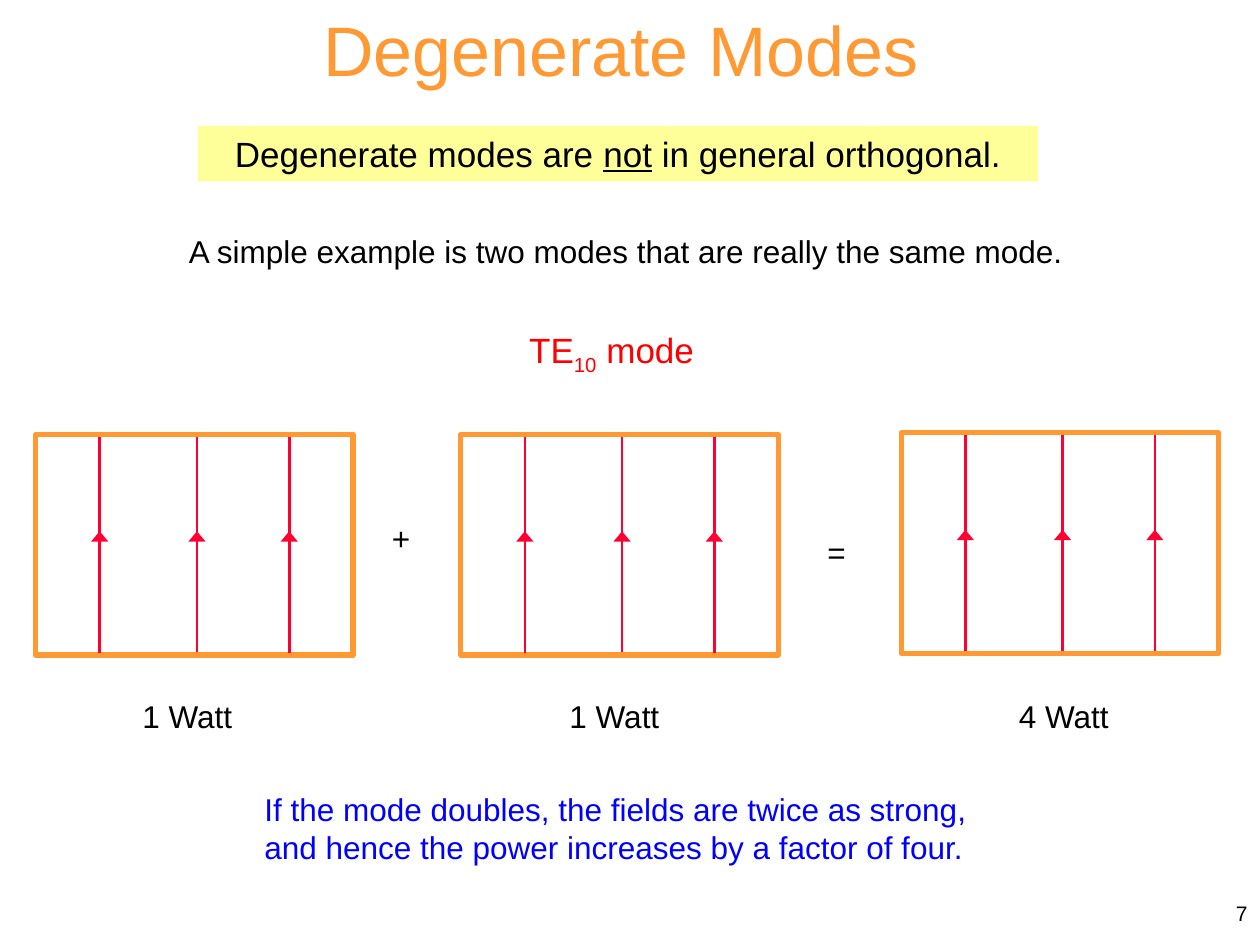
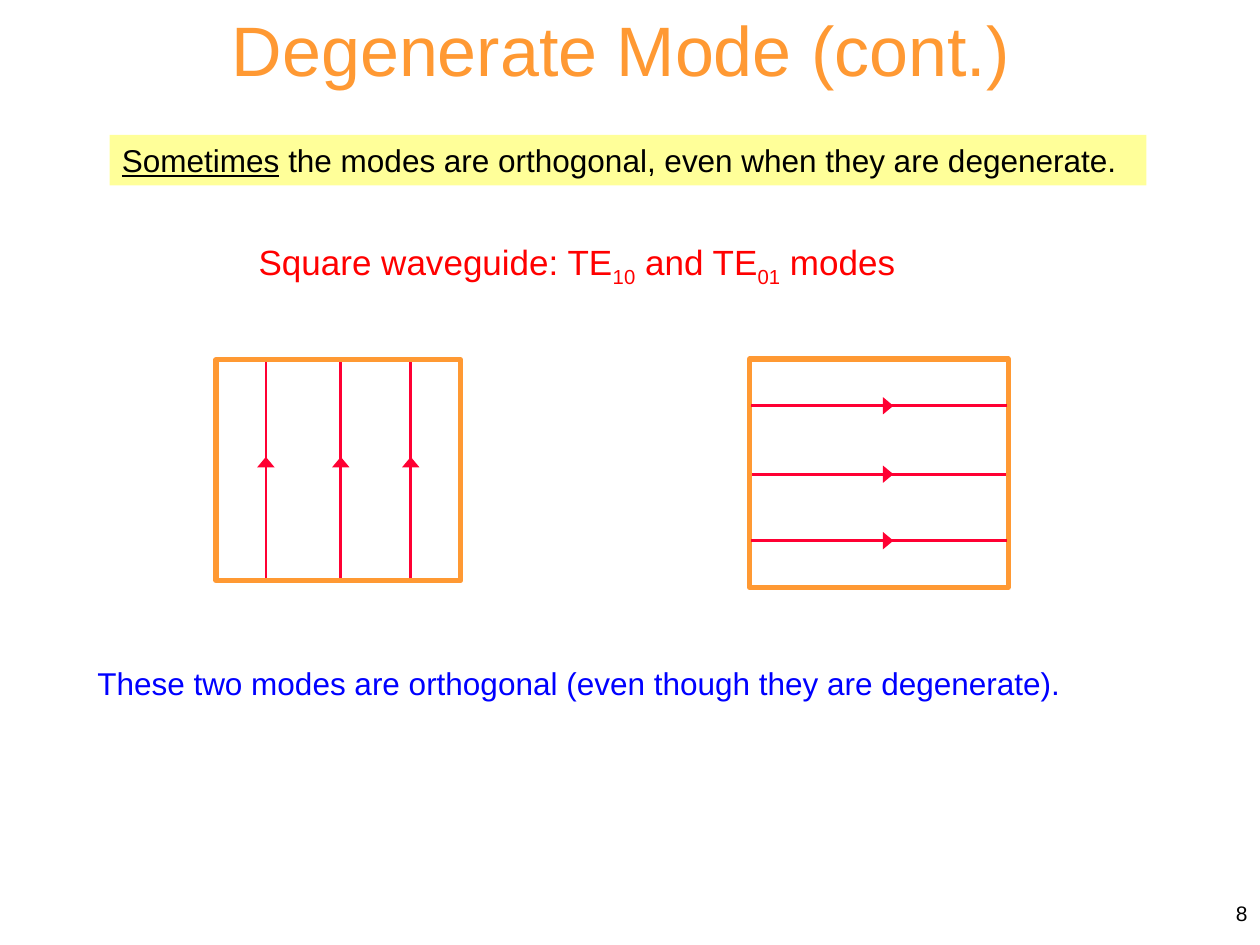
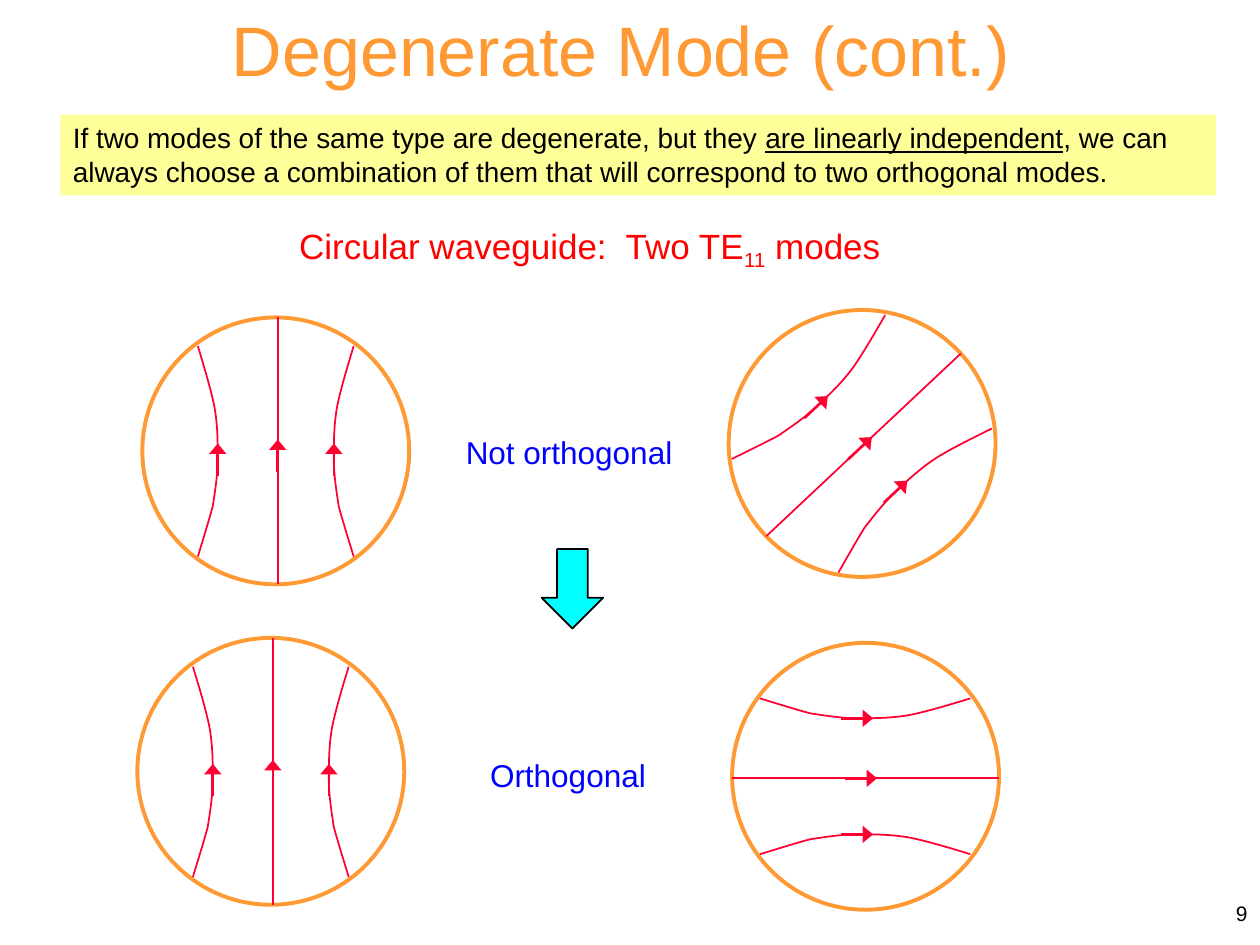
from dataclasses import dataclass
from math import cos, radians, sin
from typing import Any, NamedTuple

from lxml import etree
from pptx import Presentation
from pptx.dml.color import RGBColor
from pptx.enum.shapes import MSO_CONNECTOR, MSO_SHAPE
from pptx.enum.text import MSO_ANCHOR, MSO_AUTO_SIZE, PP_ALIGN
from pptx.oxml.ns import qn
from pptx.util import Cm, Pt

LEFT, MID, RIGHT = PP_ALIGN.LEFT, PP_ALIGN.CENTER, PP_ALIGN.RIGHT
TOP, CENTER = MSO_ANCHOR.TOP, MSO_ANCHOR.MIDDLE
FIXED = MSO_AUTO_SIZE.NONE
RECT, OVAL, DOWN = MSO_SHAPE.RECTANGLE, MSO_SHAPE.OVAL, MSO_SHAPE.DOWN_ARROW
STRAIGHT = MSO_CONNECTOR.STRAIGHT

# Bowed field line in a circle: side and along in cm, a start and four cubic curves
BOW = ((1.57, -2.13), (1.52, -1.96), (1.35, -1.42), (1.27, -1.12),
       (1.22, -0.79), (1.17, -0.48), (1.17, -0.15),
       (1.17, 0.18), (1.17, 0.53), (1.24, 0.91),
       (1.32, 1.3), (1.5, 1.88), (1.57, 2.11))


@dataclass(frozen=True)
class Theme:
    font: str = "Arial"
    orange: str = "FF9933"
    yellow: str = "FFFF99"
    field: str = "FF0033"
    red: str = "FF0000"
    blue: str = "0000FF"
    cyan: str = "00FFFF"
    black: str = "000000"
    title: int = 40
    head: int = 20
    text: int = 18
    small: int = 16
    foot: int = 12


T = Theme()


class Span(NamedTuple):
    text: str
    under: bool = False
    sub: bool = False


@dataclass(frozen=True)
class Note:
    """A line of text; its box is left, top, width, height in cm."""
    box: tuple[float, float, float, float]
    spans: tuple[Span, ...]
    size: int = T.text
    color: str = T.black
    align: Any = LEFT
    wrap: bool = True
    fill: str = ""
    anchor: Any = TOP


@dataclass(frozen=True)
class Guide:
    """A waveguide with three field lines; the angle turns them clockwise from up."""
    x: float
    y: float
    width: float = 6.4
    height: float = 4.45
    gap: float = 1.91
    half: float = 2.18
    tip: float = 0.27
    dart: float = 0.65
    mid: float = 0.05
    angle: float = 0

    def spot(self, side: float, along: float) -> tuple[int, int]:
        turn = radians(self.angle)
        return (Cm(self.x + side * cos(turn) + along * sin(turn)),
                Cm(self.y + side * sin(turn) - along * cos(turn)))


@dataclass(frozen=True)
class Page:
    title: str
    notes: tuple[Note, ...]
    boxes: tuple[Guide, ...] = ()
    rounds: tuple[Guide, ...] = ()
    arrow: tuple[float, ...] = ()


def put(item: Any, values: dict[str, Any]) -> None:
    for name, value in values.items():
        setattr(item, name, value)


def place(box: tuple[float, ...]) -> list[int]:
    return [Cm(n) for n in box]


def ink(line: Any, color: str, width: float) -> None:
    line.color.rgb = RGBColor.from_string(color)
    line.width = Pt(width)


def paint(shape: Any, fill: str = "", color: str = "", width: float = 1) -> None:
    shape.shadow.inherit = False
    if fill:
        shape.fill.solid()
        shape.fill.fore_color.rgb = RGBColor.from_string(fill)
    else:
        shape.fill.background()
    if color:
        ink(shape.line, color, width)
    else:
        shape.line.fill.background()


def write(shape: Any, note: Note) -> None:
    frame = shape.text_frame
    put(frame, {"word_wrap": note.wrap, "auto_size": FIXED,
                "vertical_anchor": note.anchor,
                "margin_left": Cm(0.25), "margin_right": Cm(0.25),
                "margin_top": Cm(0.13), "margin_bottom": Cm(0.13)})
    para = frame.paragraphs[0]
    para.alignment = note.align
    for span in note.spans:
        run = para.add_run()
        run.text = span.text
        put(run.font, {"name": T.font, "size": Pt(note.size),
                       "underline": span.under or None})
        run.font.color.rgb = RGBColor.from_string(note.color)
        if span.sub:
            run._r.get_or_add_rPr().set("baseline", "-25000")


def add_note(slide: Any, note: Note) -> None:
    area = place(note.box)
    if note.fill:
        shape = slide.shapes.add_shape(RECT, *area)
        paint(shape, note.fill)
    else:
        shape = slide.shapes.add_textbox(*area)
    write(shape, note)


def add_title(slide: Any, text: str) -> None:
    note = Note((0.51, 0, 24, 1.96), (Span(text),), T.title, T.orange, MID)
    shape = slide.shapes.title
    put(shape, dict(zip(("left", "top", "width", "height"), place(note.box))))
    write(shape, note)


def add_line(shapes: Any, start: tuple[int, int], end: tuple[int, int],
             width: float, head: bool = False) -> None:
    line = shapes.add_connector(STRAIGHT, *start, *end)
    ink(line.line, T.field, width)
    if head:
        etree.SubElement(line.line._get_or_add_ln(), qn("a:tailEnd"),
                         type="triangle", w="lg", len="med")
    etree.SubElement(line._element.spPr, qn("a:effectLst"))


def add_field(shapes: Any, guide: Guide, side: float, width: float) -> None:
    add_line(shapes, guide.spot(side, -guide.half), guide.spot(side, guide.half), width)


def add_dart(shapes: Any, guide: Guide, side: float, tip: float) -> None:
    add_line(shapes, guide.spot(side, tip - guide.dart), guide.spot(side, tip), 1.5, True)


def add_wall(shapes: Any, guide: Guide, kind: Any, width: float) -> None:
    wall = shapes.add_shape(kind, *place((
        guide.x - guide.width / 2, guide.y - guide.height / 2,
        guide.width, guide.height)))
    paint(wall, color=T.orange, width=width)


def add_bow(shapes: Any, guide: Guide, sign: int) -> None:
    dots = [guide.spot(sign * side, along) for side, along in BOW]
    pen = shapes.build_freeform(*dots[0])
    pen.add_line_segments(dots[1:], close=False)
    shape = pen.convert_to_shape()
    paint(shape, color=T.field)
    steps = list(shape._element.iter(qn("a:lnTo")))
    route = steps[0].getparent()
    for n in range(0, len(steps), 3):
        curve = etree.SubElement(route, qn("a:cubicBezTo"))
        for step in steps[n:n + 3]:
            curve.append(step[0])
            route.remove(step)


def add_box(shapes: Any, guide: Guide) -> None:
    for side in (guide.mid, guide.gap, -guide.gap):
        add_field(shapes, guide, side, 1.5)
        add_dart(shapes, guide, side, guide.tip)
        if side == guide.mid:
            add_wall(shapes, guide, RECT, 3)


def add_round(shapes: Any, guide: Guide) -> None:
    """Draw a circle with one straight field line and a bowed one on each side."""
    add_wall(shapes, guide, OVAL, 2.25)
    add_field(shapes, guide, guide.mid, 1)
    add_dart(shapes, guide, guide.mid, 0.23)
    for sign in (1, -1):
        add_bow(shapes, guide, sign)
        add_dart(shapes, guide, sign * guide.gap, guide.tip)


def disc(x: float, y: float, angle: float = 0) -> Guide:
    return Guide(x, y, 5.38, 5.38, 1.17, 2.69, 0.15, mid=0.04, angle=angle)


def label(x: float, y: float, width: float, text: str, color: str = T.black) -> Note:
    return Note((x, y, width, 1.02), (Span(text),), color=color, wrap=False)


def head(x: float, y: float, width: float, *spans: Span) -> Note:
    return Note((x, y, width, 1.12), spans, T.head, T.red, MID)


PAGES = (
    Page("Degenerate Modes", (
        Note((3.99, 2.54, 16.94, 1.12),
             (Span("Degenerate modes are "), Span("not", under=True),
              Span(" in general orthogonal.")),
             T.head, align=MID, fill=T.yellow),
        label(3.56, 4.55, 19, "A simple example is two modes that are really the same mode."),
        head(9.17, 6.5, 6.32, Span("TE"), Span("10", sub=True), Span(" mode")),
        label(2.62, 13.92, 2.34, "1 Watt"),
        label(11.23, 13.92, 2.34, "1 Watt"),
        label(20.29, 13.92, 2.34, "4 Watt"),
        label(7.65, 10.34, 0.89, "+"),
        label(16.43, 10.62, 0.89, "="),
        Note((5.08, 15.8, 14.78, 1.8),
             (Span("If the mode doubles, the fields are twice as strong, "
                   "and hence the power increases by a factor of four."),),
             color=T.blue),
    ), boxes=(Guide(3.92, 10.98), Guide(12.49, 10.98), Guide(21.37, 10.95))),
    Page("Degenerate Mode (cont.)", (
        Note((2.21, 2.72, 20.9, 1.02),
             (Span("Sometimes", under=True),
              Span(" the modes are orthogonal, even when they are degenerate.")),
             fill=T.yellow),
        head(4.24, 4.72, 14.78, Span("Square waveguide: TE"), Span("10", sub=True),
             Span(" and TE"), Span("01", sub=True), Span(" modes")),
        Note((1.61, 13.26, 20.12, 1.02),
             (Span("These two modes are orthogonal (even though they are degenerate)."),),
             color=T.blue, align=MID, wrap=False),
    ), boxes=(Guide(6.82, 9.48, 4.93, gap=1.46),
              Guide(17.72, 9.54, 5.21, 4.6, 1.36, 2.57, 0.29, 0.76, 0.02, 90))),
    Page("Degenerate Mode (cont.)", (
        Note((1.22, 2.31, 23.29, 1.63),
             (Span("If two modes of the same type are degenerate, but they "),
              Span("are linearly independent", under=True),
              Span(", we can always choose a combination of them that will "
                   "correspond to two orthogonal modes.")),
             T.small, fill=T.yellow),
        head(5.44, 4.39, 12.9, Span("Circular waveguide:  Two TE"),
             Span("11", sub=True), Span(" modes")),
        label(9.14, 8.59, 4.72, "Not orthogonal", T.blue),
        label(9.63, 15.11, 3.68, "Orthogonal", T.blue),
    ), rounds=(disc(17.45, 15.65, 90), disc(5.56, 9.09),
               disc(5.46, 15.55), disc(17.38, 8.94, 46.8)),
        arrow=(10.92, 11.07, 1.24, 1.6)),
)


def main() -> None:
    deck = Presentation()
    put(deck, {"slide_width": Cm(25.4), "slide_height": Cm(19.05)})
    for number, page in enumerate(PAGES, 7):
        slide = deck.slides.add_slide(deck.slide_layouts[5])
        add_title(slide, page.title)
        for note in page.notes:
            add_note(slide, note)
        for draw, guides in ((add_box, page.boxes), (add_round, page.rounds)):
            for guide in guides:
                draw(slide.shapes.add_group_shape().shapes, guide)
        if page.arrow:
            paint(slide.shapes.add_shape(DOWN, *place(page.arrow)), T.cyan, T.black)
        add_note(slide, Note((20.12, 17.78, 5.28, 1.27), (Span(str(number)),),
                             T.foot, align=RIGHT, anchor=CENTER))
    deck.save("out.pptx")


if __name__ == "__main__":
    main()
